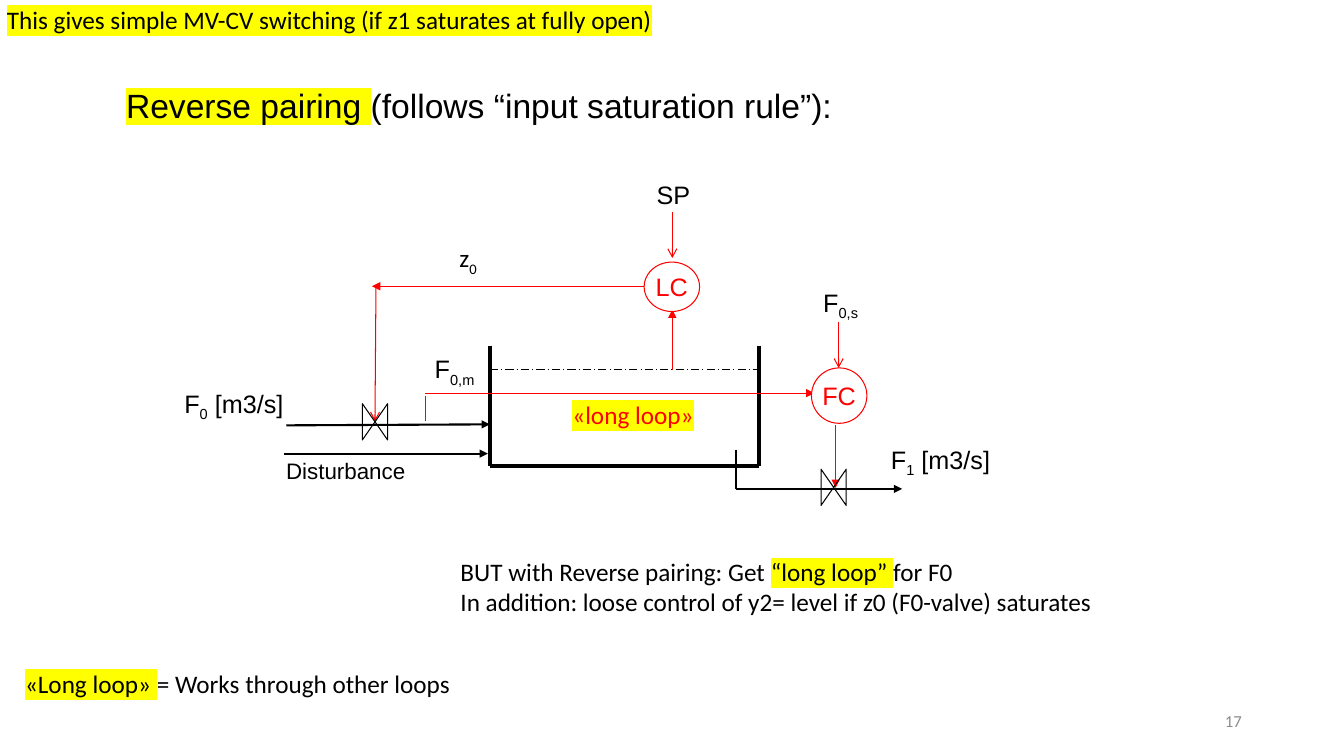
from dataclasses import dataclass

from lxml import etree
from pptx import Presentation
from pptx import util as u
from pptx.dml.color import RGBColor
from pptx.enum import dml, shapes, text
from pptx.oxml.ns import qn

# Grid: one column and one row are each a tenth of an inch
COLUMNS, ROWS = 133.33, 75
CELL = u.Inches(0.1)
BLACK, RED, WHITE, YELLOW, GREY = "000000", "FF0000", "FFFFFF", "FFFF00", "8C8C8C"
LEFT, CENTER, RIGHT = text.PP_ALIGN.LEFT, text.PP_ALIGN.CENTER, text.PP_ALIGN.RIGHT


@dataclass
class Piece:
    text: str
    highlight: bool = False
    subscript: bool = False


@dataclass
class Label:
    box: tuple[float, float, float, float]
    paragraphs: list[list[Piece]]
    font: str = "Arial"
    size: float = 18
    color: str = BLACK
    align: text.PP_ALIGN = LEFT
    wrap: bool = False


@dataclass
class Pipe:
    start: tuple[float, float]
    end: tuple[float, float]
    color: str = BLACK
    width: float = 0.75
    tail: str = ""
    head: str = ""
    dashed: bool = False


@dataclass
class Controller:
    name: str
    box: tuple[float, float, float, float]


def color_of(value: str) -> RGBColor:
    return RGBColor.from_string(value)


def cells(*counts: float) -> list[int]:
    return [round(count * CELL) for count in counts]


def write(frame, label: Label) -> None:
    frame.word_wrap = label.wrap
    for index, pieces in enumerate(label.paragraphs):
        paragraph = frame.add_paragraph() if index else frame.paragraphs[0]
        paragraph.alignment = label.align
        paragraph.font.name = label.font
        paragraph.font.size = u.Pt(label.size)
        paragraph.font.color.rgb = color_of(label.color)
        for piece in pieces:
            run = paragraph.add_run()
            run.text = piece.text
            properties = run._r.get_or_add_rPr()
            if piece.subscript:
                properties.set("baseline", "-25000")
            if piece.highlight:
                mark = etree.SubElement(properties, qn("a:highlight"))
                etree.SubElement(mark, qn("a:srgbClr"), val=YELLOW)


def add_label(slide, label: Label):
    shape = slide.shapes.add_textbox(*cells(*label.box))
    write(shape.text_frame, label)
    shape.text_frame.auto_size = text.MSO_AUTO_SIZE.SHAPE_TO_FIT_TEXT
    return shape


def add_pipe(slide, pipe: Pipe) -> None:
    connector = slide.shapes.add_connector(
        shapes.MSO_CONNECTOR.STRAIGHT, *cells(*pipe.start, *pipe.end))
    line = connector.line
    line.color.rgb = color_of(pipe.color)
    line.width = u.Pt(pipe.width)
    if pipe.dashed:
        line.dash_style = dml.MSO_LINE.LONG_DASH_DOT
    for tag, kind in (("a:headEnd", pipe.head), ("a:tailEnd", pipe.tail)):
        if kind:
            etree.SubElement(line._get_or_add_ln(), qn(tag), type=kind)
    etree.SubElement(connector._element.spPr, qn("a:effectLst"))


def add_outline(slide, kind, box: tuple, color: str):
    shape = slide.shapes.add_shape(kind, *cells(*box))
    shape.shadow.inherit = False
    shape.line.color.rgb = color_of(color)
    shape.line.width = u.Pt(0.75)
    return shape


def add_valve(slide, left: float, top: float) -> None:
    valve = add_outline(slide, shapes.MSO_SHAPE.FLOWCHART_COLLATE, (left, top, 3.6, 2.5), BLACK)
    valve.fill.background()
    valve.rotation = 90


def add_controller(slide, controller: Controller) -> None:
    circle = add_outline(slide, shapes.MSO_SHAPE.OVAL, controller.box, RED)
    circle.fill.solid()
    circle.fill.fore_color.rgb = color_of(WHITE)
    circle.text_frame.vertical_anchor = text.MSO_ANCHOR.MIDDLE
    write(circle.text_frame,
          Label(controller.box, [[Piece(controller.name)]], color=RED, align=CENTER))


def symbol(name: str, index: str, unit: str = "") -> list[list[Piece]]:
    pieces = [Piece(name), Piece(index, subscript=True)]
    return [pieces + [Piece(unit)] if unit else pieces]


TITLE = Label((11.5, 7.9, 72.8, 5), [[Piece("Reverse pairing ", highlight=True),
                                      Piece("(follows “input saturation rule”):")]], size=24)

TANK_LEFT, TANK_RIGHT, TANK_TOP, TANK_FLOOR, LEVEL = 48.6, 75.3, 34.3, 46.2, 36.7
TANK_AND_FLOWS = [
    Pipe((TANK_LEFT, TANK_TOP), (TANK_LEFT, TANK_FLOOR), width=3),
    Pipe((TANK_LEFT, TANK_FLOOR), (TANK_RIGHT, TANK_FLOOR), width=3),
    Pipe((TANK_RIGHT, TANK_TOP), (TANK_RIGHT, TANK_FLOOR), width=3),
    Pipe((TANK_LEFT, LEVEL), (TANK_RIGHT, LEVEL), dashed=True),
    Pipe((28.2, 45), (48.4, 45), width=1.5, tail="triangle"),
    Pipe((73, 44.6), (73, 48.5), width=1.5),
    Pipe((73, 48.5), (89.5, 48.5), width=1.5, tail="triangle"),
    Pipe((28.4, 42.2), (TANK_LEFT, 42.1), width=1.5, tail="triangle"),
]
SIGNALS = [
    Pipe((66.7, 30.7), (66.7, LEVEL), RED, 1, head="triangle"),
    Pipe((63.9, 28.4), (36.9, 28.4), RED, tail="triangle"),
    Pipe((42.2, 41.8), (42.2, 39.3), RED),
    Pipe((83.2, 31.9), (83.2, 36.5), RED, tail="arrow"),
    Pipe((82.9, 42.2), (82.9, 48.4), RED, tail="triangle"),
    Pipe((66.7, 21), (66.7, 25.6), RED, tail="arrow"),
    Pipe((37.3, 28.3), (37.2, 41.8), RED, tail="arrow"),
    Pipe((42.2, 39), (80.8, 39), RED, tail="triangle"),
]
VALVES = [(80.9, 47.1), (35.4, 40.6)]
CONTROLLERS = [Controller("LC", (63.9, 26, 5.5, 4.9)), Controller("FC", (80.5, 36.5, 5.5, 5.5))]

LABELS = [
    Label((27.4, 44.9, 14, 3.7), [[Piece("Disturbance")]], size=16),
    Label((64.1, 17.3, 5.4, 4), [[Piece("SP")]], align=CENTER),
    Label((41.9, 34.6, 6.4, 4), symbol("F", "0,m"), align=CENTER),
    Label((80.5, 28, 5.8, 4), symbol("F", "0,s"), align=CENTER),
    Label((17.3, 38, 12.1, 4), symbol("F", "0", " [m3/s]")),
    Label((87.4, 43.6, 12.1, 4), symbol("F", "1", " [m3/s]")),
    Label((44.6, 23.6, 3.9, 4), symbol("z", "0"), "Calibri"),
    Label((55.8, 39.1, 24.7, 4), [[Piece("«long loop»", highlight=True)]], "Calibri",
          color=RED, wrap=True),
    Label((44.7, 54.7, 66, 7.1),
          [[Piece("BUT with Reverse pairing: Get "), Piece("“long loop” ", highlight=True),
            Piece("for F0")],
           [Piece("In addition: loose control of y2= level if z0 (F0-valve) saturates")]],
          "Calibri"),
    Label((-0.3, -0.1, 67.5, 4),
          [[Piece("This gives simple MV-CV switching (if z1 saturates at fully open)",
                  highlight=True)]], "Calibri"),
    Label((1.5, 65.8, 44.7, 4), [[Piece("«Long loop» ", highlight=True),
                                  Piece("= Works through other loops")]], "Calibri"),
]
PAGE_NUMBER = Label((94.2, 69.5, 30, 4), [[Piece("17")]], "Calibri", 12, GREY, RIGHT, True)


def main() -> None:
    presentation = Presentation()
    presentation.slide_width, presentation.slide_height = cells(COLUMNS, ROWS)
    slide = presentation.slides.add_slide(presentation.slide_layouts[5])

    # Title
    title = slide.shapes.title
    title.left, title.top, title.width, title.height = cells(*TITLE.box)
    title.text_frame.vertical_anchor = text.MSO_ANCHOR.TOP
    write(title.text_frame, TITLE)

    # Tank, flows, control signals, valves and controllers
    for pipe in TANK_AND_FLOWS + SIGNALS:
        add_pipe(slide, pipe)
    for valve in VALVES:
        add_valve(slide, *valve)
    for controller in CONTROLLERS:
        add_controller(slide, controller)

    # Labels, remarks and page number
    for label in LABELS:
        add_label(slide, label)
    number = add_label(slide, PAGE_NUMBER)
    number.text_frame.auto_size = text.MSO_AUTO_SIZE.NONE
    number.text_frame.vertical_anchor = text.MSO_ANCHOR.MIDDLE

    presentation.save("out.pptx")


if __name__ == "__main__":
    main()
